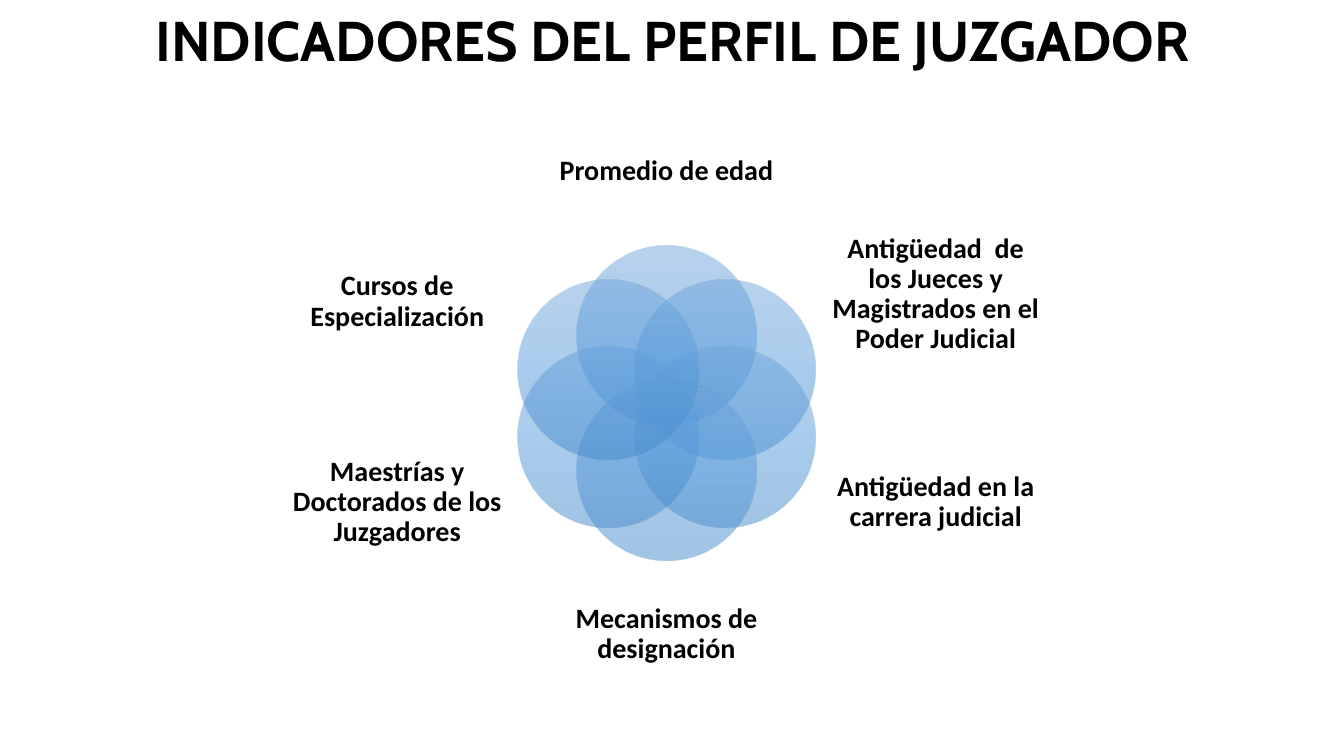
import copy
import math

import lxml.etree
import pptx
import pptx.dml.color
import pptx.enum.shapes
import pptx.enum.text
import pptx.oxml.ns
import pptx.util

Inches = pptx.util.Inches

CENTRE_X, CENTRE_Y = 6.61, 4.0
RING_RADIUS = 0.67
CIRCLE_SIZE = 1.79
GRADIENT = ["71A6DB", "559BDB", "448ACA"]
OPACITY = 50

# Clockwise from the top: wording and box (left, top, width, height)
INDICATORS = [
    ("Promedio de edad", (5.49, 1.09, 2.24, 1.22)),
    ("Antigüedad  de los Jueces y Magistrados en el Poder Judicial",
     (8.22, 2.25, 2.12, 1.34)),
    ("Antigüedad en la carrera judicial", (8.22, 4.24, 2.12, 1.49)),
    ("Mecanismos de designación", (5.49, 5.68, 2.24, 1.22)),
    ("Maestrías y Doctorados de los Juzgadores", (2.88, 4.24, 2.12, 1.49)),
    ("Cursos de Especialización", (2.88, 2.25, 2.12, 1.49)),
]


def colour(hex_string):
    return pptx.dml.color.RGBColor.from_string(hex_string)


def add_label(slide, text, box, font_name, size):
    frame = slide.shapes.add_textbox(*map(Inches, box)).text_frame
    frame.word_wrap = True
    frame.vertical_anchor = pptx.enum.text.MSO_ANCHOR.MIDDLE
    frame.margin_left = frame.margin_right = 0
    frame.margin_top = frame.margin_bottom = 0
    paragraph = frame.paragraphs[0]
    paragraph.text = text
    paragraph.alignment = pptx.enum.text.PP_ALIGN.CENTER
    paragraph.line_spacing = 0.9
    paragraph.font.name = font_name
    paragraph.font.size = pptx.util.Pt(size)
    paragraph.font.bold = True
    paragraph.font.color.rgb = colour("000000")


def fill_translucent_gradient(shape):
    qn = pptx.oxml.ns.qn
    shape.fill.gradient()
    shape.fill.gradient_angle = 270
    stop_list = next(shape._element.spPr.iter(qn("a:gsLst")))
    stop_list.append(copy.deepcopy(stop_list[-1]))
    for index, (stop, tone) in enumerate(zip(shape.fill.gradient_stops, GRADIENT)):
        stop.color.rgb = colour(tone)
        stop.position = index / (len(GRADIENT) - 1)
    for rgb in stop_list.iter(qn("a:srgbClr")):
        lxml.etree.SubElement(rgb, qn("a:alpha")).set("val", str(OPACITY * 1000))


def add_circle(slide, angle):
    left = CENTRE_X + RING_RADIUS * math.sin(angle) - CIRCLE_SIZE / 2
    top = CENTRE_Y - RING_RADIUS * math.cos(angle) - CIRCLE_SIZE / 2
    circle = slide.shapes.add_shape(
        pptx.enum.shapes.MSO_SHAPE.OVAL,
        Inches(left), Inches(top), Inches(CIRCLE_SIZE), Inches(CIRCLE_SIZE))
    circle.shadow.inherit = False
    circle.line.fill.background()
    fill_translucent_gradient(circle)


def main():
    presentation = pptx.Presentation()
    presentation.slide_width = Inches(13.33)
    presentation.slide_height = Inches(7.5)
    slide = presentation.slides.add_slide(presentation.slide_layouts[6])

    # Title
    add_label(slide, "INDICADORES DEL PERFIL DE JUZGADOR",
              (0.92, 0.08, 11.5, 0.71), "Cabin", 40)

    # Ring of overlapping circles, each with its indicator
    for index, (indicator, box) in enumerate(INDICATORS):
        add_circle(slide, math.tau * index / len(INDICATORS))
        add_label(slide, indicator, box, "Calibri", 20)

    presentation.save("out.pptx")


if __name__ == "__main__":
    main()
